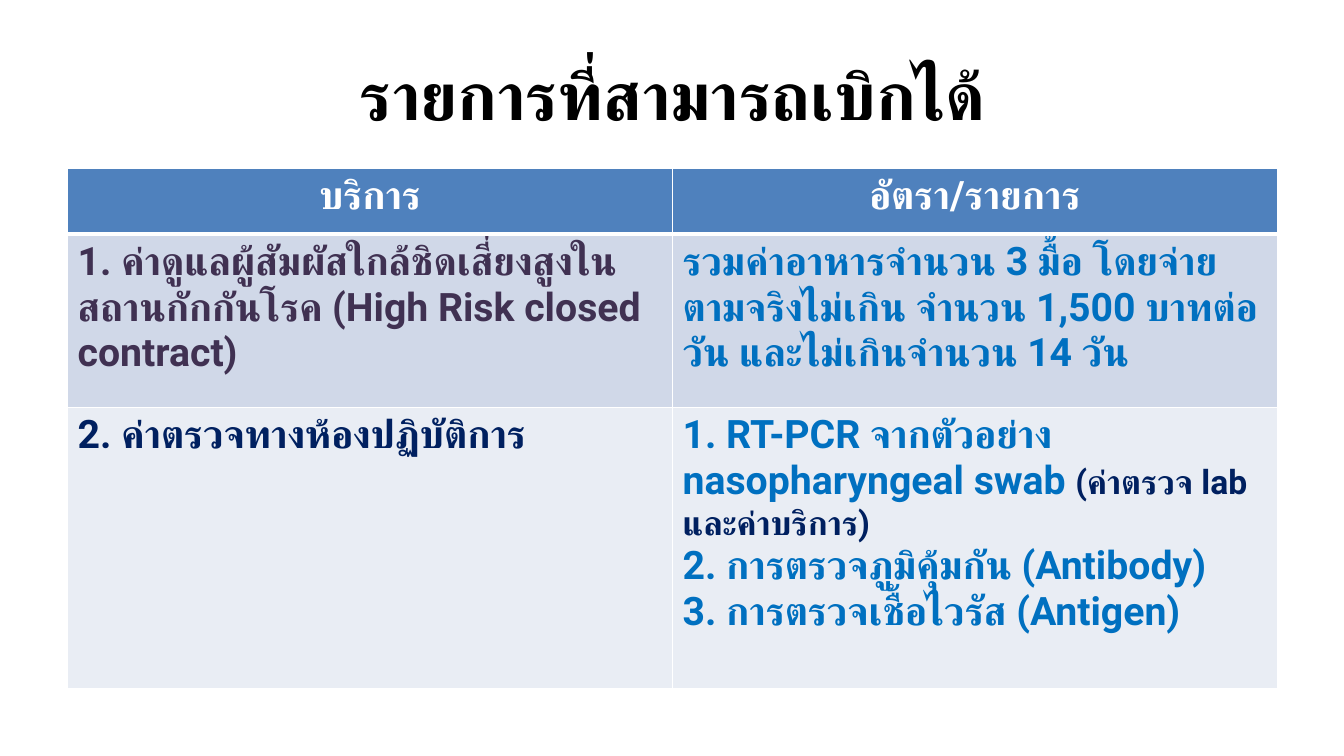
from dataclasses import dataclass

import pptx
import pptx.dml.color
import pptx.enum.lang
import pptx.enum.text
import pptx.oxml
import pptx.oxml.ns
import pptx.util
from pptx.util import Inches

FONT = "Roboto"
WHITE, BLACK = "FFFFFF", "000000"
PLUM, BLUE, NAVY = "403152", "0070C0", "002060"
CENTER = pptx.enum.text.PP_ALIGN.CENTER
LEFT = pptx.enum.text.PP_ALIGN.LEFT


@dataclass
class Span:
    text: str
    color: str
    size: int = 28


@dataclass
class TableRow:
    height: float
    fill: str
    cells: list[list[list[Span]]]
    alignment: pptx.enum.text.PP_ALIGN = LEFT
    top_border: int = 1
    bottom_border: int = 1


ROWS = [
    TableRow(0.65, "4F81BD", [
        [[Span("บริการ", WHITE)]],
        [[Span("อัตรา/รายการ", WHITE)]],
    ], alignment=CENTER, bottom_border=3),
    TableRow(1.72, "D0D8E8", [
        [[Span("1. ค่าดูแลผู้สัมผัสใกล้ชิดเสี่ยงสูงในสถานกักกันโรค (High Risk closed contract)", PLUM)]],
        [[Span("รวมค่าอาหารจำนวน 3 มื้อ โดยจ่ายตามจริงไม่เกิน จำนวน 1,500 บาทต่อวัน "
               "และไม่เกินจำนวน 14 วัน", BLUE)]],
    ], top_border=3),
    TableRow(2.79, "E9EDF4", [
        [[Span("2. ค่าตรวจทางห้องปฏิบัติการ", NAVY)]],
        [
            [Span("1. RT-PCR จากตัวอย่าง nasopharyngeal swab ", BLUE),
             Span("(ค่าตรวจ lab และค่าบริการ)", NAVY, 24)],
            [Span("2. การตรวจภูมิคุ้มกัน (Antibody)", BLUE)],
            [Span("3. การตรวจเชื้อไวรัส (Antigen)", BLUE)],
        ],
    ]),
]


def rgb(color: str) -> pptx.dml.color.RGBColor:
    return pptx.dml.color.RGBColor.from_string(color)


def write_text(text_frame, paragraphs: list[list[Span]], alignment) -> None:
    text_frame.word_wrap = True
    for index, spans in enumerate(paragraphs):
        paragraph = text_frame.paragraphs[0] if index == 0 else text_frame.add_paragraph()
        paragraph.alignment = alignment
        for span in spans:
            run = paragraph.add_run()
            run.text = span.text
            font = run.font
            font.name = FONT
            font.size = pptx.util.Pt(span.size)
            font.bold = True
            font.color.rgb = rgb(span.color)
            font.language_id = pptx.enum.lang.MSO_LANGUAGE_ID.THAI
            # Thai letters take the complex-script font
            complex_font = pptx.oxml.parse_xml(
                f'<a:cs {pptx.oxml.ns.nsdecls("a")} typeface="{FONT}"/>')
            run._r.get_or_add_rPr().append(complex_font)


def add_borders(cell, top: int, bottom: int) -> None:
    properties = cell._tc.get_or_add_tcPr()
    for side, width in (("L", 1), ("R", 1), ("T", top), ("B", bottom)):
        properties.append(pptx.oxml.parse_xml(
            f'<a:ln{side} {pptx.oxml.ns.nsdecls("a")} w="{pptx.util.Pt(width)}">'
            f'<a:solidFill><a:srgbClr val="{WHITE}"/></a:solidFill></a:ln{side}>'))


def add_title(slide) -> None:
    title = slide.shapes.add_textbox(Inches(0.67), Inches(0.3), Inches(12), Inches(1.25))
    title.text_frame.vertical_anchor = pptx.enum.text.MSO_ANCHOR.MIDDLE
    write_text(title.text_frame, [[Span("รายการที่สามารถเบิกได้", BLACK, 48)]], CENTER)


def add_rate_table(slide) -> None:
    height = sum(row.height for row in ROWS)
    table = slide.shapes.add_table(
        len(ROWS), 2, Inches(0.67), Inches(1.67), Inches(12), Inches(height)).table
    for row_index, row in enumerate(ROWS):
        table.rows[row_index].height = Inches(row.height)
        for column_index, paragraphs in enumerate(row.cells):
            cell = table.cell(row_index, column_index)
            add_borders(cell, row.top_border, row.bottom_border)
            cell.fill.solid()
            cell.fill.fore_color.rgb = rgb(row.fill)
            write_text(cell.text_frame, paragraphs, row.alignment)


def main() -> None:
    presentation = pptx.Presentation()
    presentation.slide_width = Inches(13.33)
    presentation.slide_height = Inches(7.5)
    slide = presentation.slides.add_slide(presentation.slide_layouts[6])
    add_title(slide)
    add_rate_table(slide)
    presentation.save("out.pptx")


if __name__ == "__main__":
    main()
